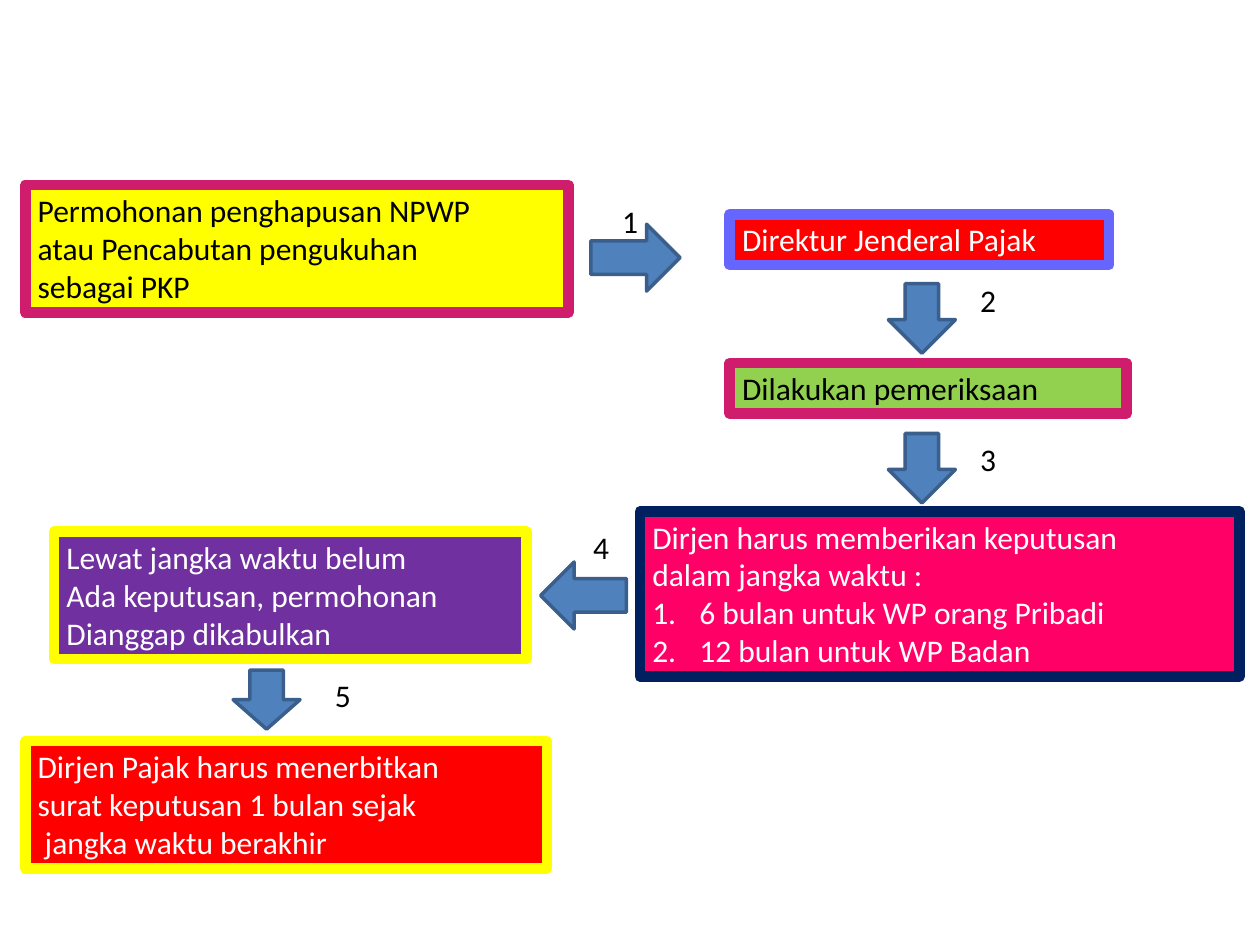
from lxml.etree import SubElement
from pptx import Presentation
from pptx.dml.color import RGBColor
from pptx.enum.shapes import MSO_SHAPE
from pptx.enum.text import MSO_ANCHOR, PP_ALIGN
from pptx.oxml.ns import qn
from pptx.util import Cm, Pt

BLACK = RGBColor(0x00, 0x00, 0x00)
WHITE = RGBColor(0xFF, 0xFF, 0xFF)
YELLOW = RGBColor(0xFF, 0xFF, 0x00)
RED = RGBColor(0xFF, 0x00, 0x00)
GREEN = RGBColor(0x92, 0xD0, 0x50)
PINK = RGBColor(0xFF, 0x00, 0x66)
PURPLE = RGBColor(0x70, 0x30, 0xA0)
MAGENTA = RGBColor(0xD0, 0x1C, 0x6D)
PERIWINKLE = RGBColor(0x66, 0x66, 0xFF)
NAVY = RGBColor(0x00, 0x20, 0x60)
BLUE = RGBColor(0x4F, 0x81, 0xBD)
DARK_BLUE = RGBColor(0x3A, 0x5F, 0x8C)

STEPS = [
    ((0.51, 3.73, 10.95, 2.57), YELLOW, MAGENTA, BLACK,
     ["Permohonan penghapusan NPWP", "atau Pencabutan pengukuhan", "sebagai PKP"]),
    ((14.71, 4.32, 7.65, 1.02), RED, PERIWINKLE, WHITE, ["Direktur Jenderal Pajak"]),
    ((14.71, 7.32, 8, 1.02), GREEN, MAGENTA, BLACK, ["Dilakukan pemeriksaan"]),
    ((12.9, 10.31, 12.09, 3.33), PINK, NAVY, WHITE,
     ["Dirjen harus memberikan keputusan", "dalam jangka waktu :",
      "6 bulan untuk WP orang Pribadi", "12 bulan untuk WP Badan"]),
    ((1.09, 10.72, 9.53, 2.57), PURPLE, YELLOW, WHITE,
     ["Lewat jangka waktu belum", "Ada keputusan, permohonan", "Dianggap dikabulkan"]),
    ((0.51, 14.94, 10.52, 2.57), RED, YELLOW, WHITE,
     ["Dirjen Pajak harus menerbitkan", "surat keputusan 1 bulan sejak",
      " jangka waktu berakhir"]),
]

ARROWS = [
    (MSO_SHAPE.RIGHT_ARROW, (11.91, 4.52, 1.8, 1.35), (12.29, 3.94)),
    (MSO_SHAPE.DOWN_ARROW, (17.91, 5.72, 1.35, 1.4), (19.51, 5.54)),
    (MSO_SHAPE.DOWN_ARROW, (17.91, 8.74, 1.35, 1.4), (19.51, 8.74)),
    (MSO_SHAPE.LEFT_ARROW, (10.9, 11.33, 1.73, 1.35), (11.71, 10.52)),
    (MSO_SHAPE.DOWN_ARROW, (4.7, 13.51, 1.35, 1.19), (6.5, 13.51)),
]


def add_filled_shape(page, kind, place, fill, border, width):
    shape = page.shapes.add_shape(kind, *map(Cm, place))
    shape.shadow.inherit = False
    shape.fill.solid()
    shape.fill.fore_color.rgb = fill
    shape.line.color.rgb = border
    shape.line.width = Pt(width)
    return shape


def write_text(box, lines, color):
    frame = box.text_frame
    frame.word_wrap = True
    frame.vertical_anchor = MSO_ANCHOR.TOP
    frame.text = "\n".join(lines)
    for paragraph in frame.paragraphs:
        paragraph.alignment = PP_ALIGN.LEFT
        for span in paragraph.runs:
            span.font.name = "Calibri"
            span.font.size = Pt(18)
            span.font.color.rgb = color


def number_paragraph(paragraph):
    properties = paragraph._p.get_or_add_pPr()
    properties.set("marL", str(Cm(0.95)))
    properties.set("indent", str(-Cm(0.95)))
    SubElement(properties, qn("a:buFont"), typeface="+mj-lt")
    SubElement(properties, qn("a:buAutoNum"), type="arabicPeriod")


def add_step(page, place, fill, border, color, lines):
    box = add_filled_shape(page, MSO_SHAPE.RECTANGLE, place, fill, border, 6)
    write_text(box, lines, color)
    return box


def add_arrow_number(page, number, left, top):
    box = page.shapes.add_textbox(Cm(left), Cm(top), Cm(0.91), Cm(1.02))
    write_text(box, [str(number)], BLACK)


def main():
    deck = Presentation()
    deck.slide_width, deck.slide_height = Cm(25.4), Cm(19.05)
    page = deck.slides.add_slide(deck.slide_layouts[6])

    boxes = [add_step(page, *step) for step in STEPS]
    decision_box = boxes[3]
    for paragraph in decision_box.text_frame.paragraphs[2:]:
        number_paragraph(paragraph)

    for number, (kind, place, label_corner) in enumerate(ARROWS, start=1):
        add_filled_shape(page, kind, place, BLUE, DARK_BLUE, 2)
        add_arrow_number(page, number, *label_corner)

    deck.save("out.pptx")


if __name__ == "__main__":
    main()
